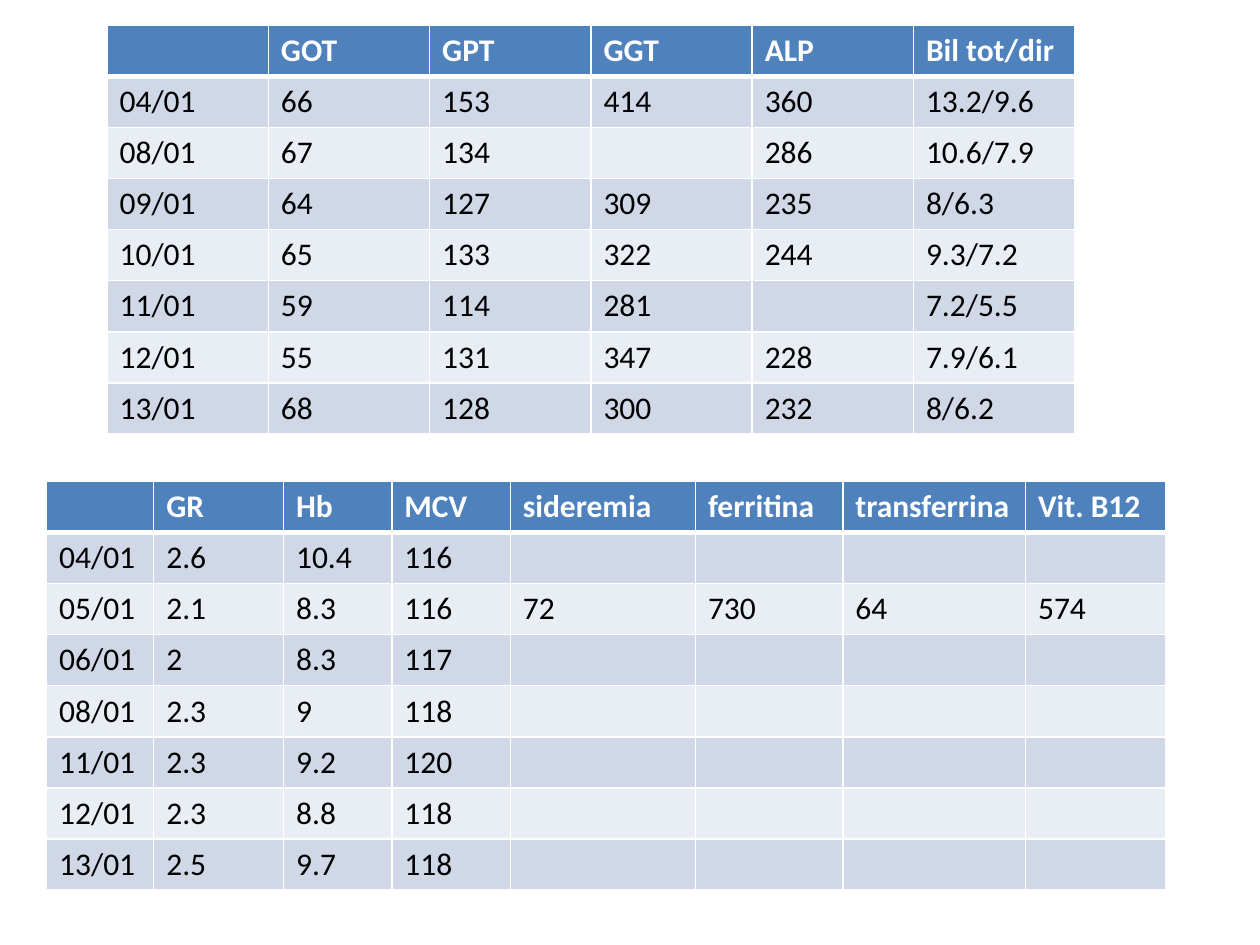
import lxml.etree
import pptx
import pptx.dml.color
import pptx.oxml.ns
import pptx.util

Inches = pptx.util.Inches
Pt = pptx.util.Pt
RGBColor = pptx.dml.color.RGBColor

WHITE = RGBColor(0xFF, 0xFF, 0xFF)
BLACK = RGBColor(0x00, 0x00, 0x00)
HEADER_BLUE = RGBColor(0x4F, 0x81, 0xBD)
ROW_BANDS = (RGBColor(0xE9, 0xED, 0xF4), RGBColor(0xD0, 0xD8, 0xE8))

TABLE_HEIGHT = 3.24
RULE, HEADER_RULE = 1, 3

LIVER_WIDTHS = [1.28] * 6
LIVER_TESTS = [
    ["", "GOT", "GPT", "GGT", "ALP", "Bil tot/dir"],
    ["04/01", "66", "153", "414", "360", "13.2/9.6"],
    ["08/01", "67", "134", "", "286", "10.6/7.9"],
    ["09/01", "64", "127", "309", "235", "8/6.3"],
    ["10/01", "65", "133", "322", "244", "9.3/7.2"],
    ["11/01", "59", "114", "281", "", "7.2/5.5"],
    ["12/01", "55", "131", "347", "228", "7.9/6.1"],
    ["13/01", "68", "128", "300", "232", "8/6.2"],
]

BLOOD_WIDTHS = [0.85, 1.03, 0.86, 0.94, 1.47, 1.17, 1.45, 1.11]
BLOOD_TESTS = [
    ["", "GR", "Hb", "MCV", "sideremia", "ferritina", "transferrina", "Vit. B12"],
    ["04/01", "2.6", "10.4", "116"],
    ["05/01", "2.1", "8.3", "116", "72", "730", "64", "574"],
    ["06/01", "2", "8.3", "117"],
    ["08/01", "2.3", "9", "118"],
    ["11/01", "2.3", "9.2", "120"],
    ["12/01", "2.3", "8.8", "118"],
    ["13/01", "2.5", "9.7", "118"],
]


def set_borders(cell, top, bottom):
    qn = pptx.oxml.ns.qn
    properties = cell._tc.get_or_add_tcPr()
    widths = {"a:lnL": RULE, "a:lnR": RULE, "a:lnT": top, "a:lnB": bottom}
    for side, width in widths.items():
        border = lxml.etree.SubElement(properties, qn(side), w=str(Pt(width)))
        fill = lxml.etree.SubElement(border, qn("a:solidFill"))
        lxml.etree.SubElement(fill, qn("a:srgbClr"), val=str(WHITE))


def write_value(cell, value, is_header):
    if not value:
        return
    run = cell.text_frame.paragraphs[0].add_run()
    run.text = value
    text_format = {"name": "Calibri", "size": Pt(18), "bold": is_header}
    for attribute, setting in text_format.items():
        setattr(run.font, attribute, setting)
    run.font.color.rgb = WHITE if is_header else BLACK


def add_results(slide, left, top, widths, results):
    table = slide.shapes.add_table(
        len(results), len(widths),
        Inches(left), Inches(top), Inches(sum(widths)), Inches(TABLE_HEIGHT),
    ).table
    for column, width in zip(table.columns, widths):
        column.width = Inches(width)
    for row_index, values in enumerate(results):
        table.rows[row_index].height = Inches(TABLE_HEIGHT / len(results))
        is_header = row_index == 0
        top_rule = HEADER_RULE if row_index == 1 else RULE
        bottom_rule = HEADER_RULE if is_header else RULE
        for cell in table.rows[row_index].cells:
            set_borders(cell, top_rule, bottom_rule)
            cell.fill.solid()
            cell.fill.fore_color.rgb = HEADER_BLUE if is_header else ROW_BANDS[row_index % 2]
        for cell, value in zip(table.rows[row_index].cells, values):
            write_value(cell, value, is_header)


def main():
    presentation = pptx.Presentation()
    presentation.slide_width = Inches(10)
    presentation.slide_height = Inches(7.5)
    slide = presentation.slides.add_slide(presentation.slide_layouts[6])
    add_results(slide, 0.85, 0.2, LIVER_WIDTHS, LIVER_TESTS)
    add_results(slide, 0.37, 3.82, BLOOD_WIDTHS, BLOOD_TESTS)
    presentation.save("out.pptx")


if __name__ == "__main__":
    main()
